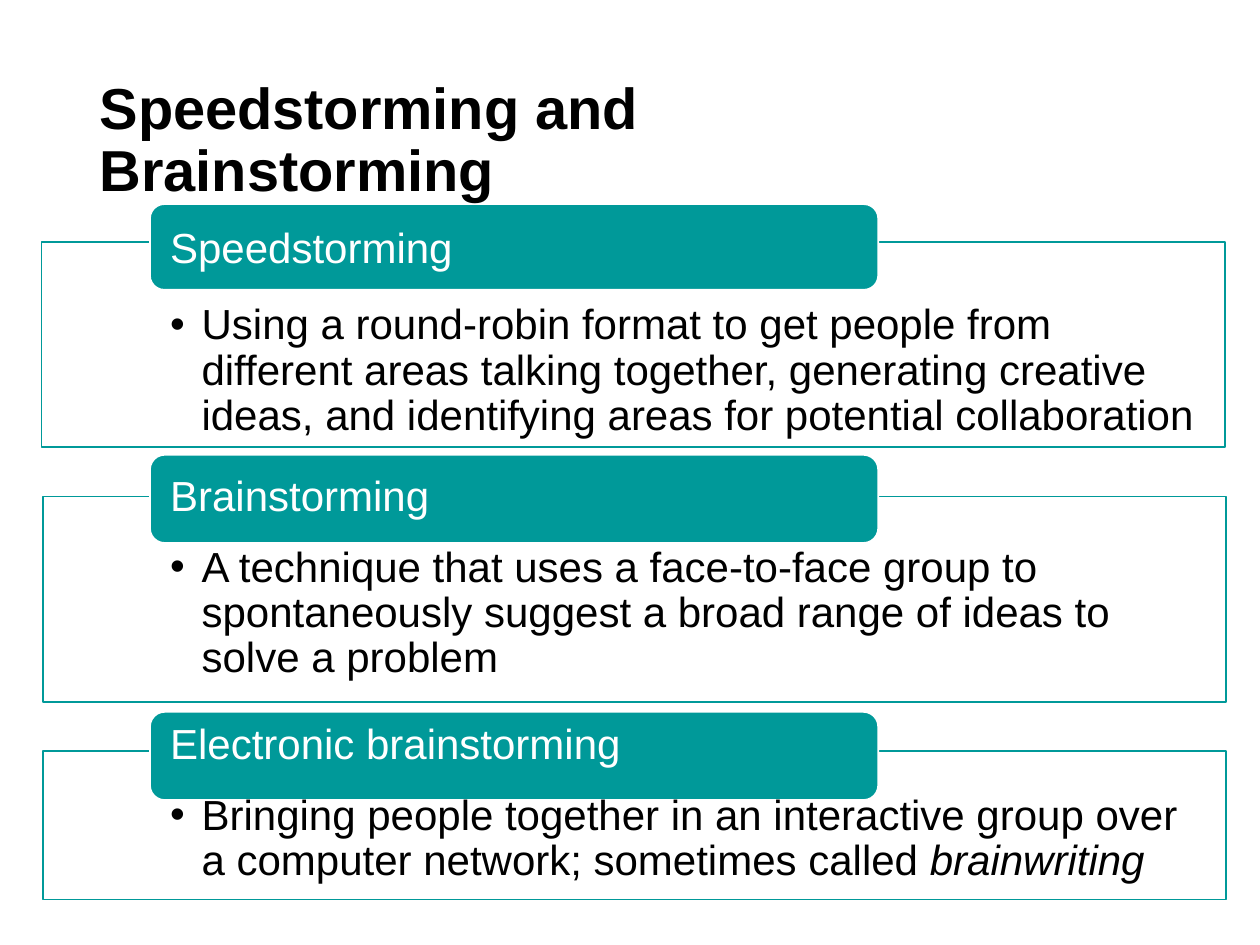
"""Build the Speedstorming and Brainstorming slide."""
import pptx
import pptx.dml.color
import pptx.enum.shapes
import pptx.enum.text
import pptx.oxml
import pptx.oxml.ns
import pptx.util

Inches = pptx.util.Inches
Pt = pptx.util.Pt
SHAPE = pptx.enum.shapes.MSO_SHAPE
ANCHOR = pptx.enum.text.MSO_ANCHOR

TEAL, WHITE, BLACK = "009999", "FFFFFF", "000000"
TITLE = "Speedstorming and Brainstorming"
SECTIONS = [
    {"heading": "Speedstorming",
     "spans": [("Using a round-robin format to get people from different areas talking together, "
                "generating creative ideas, and identifying areas for potential collaboration", False)],
     "frame": (0.33, 1.92, 9.39, 1.63), "label": (1.19, 1.62, 5.78, 0.68),
     "before": 0, "after": 18},
    {"heading": "Brainstorming",
     "spans": [("A technique that uses a face-to-face group to spontaneously suggest "
                "a broad range of ideas to solve a problem", False)],
     "frame": (0.34, 3.94, 9.39, 1.63), "label": (1.19, 3.61, 5.78, 0.7),
     "before": 20.3, "after": 14.4},
    {"heading": "Electronic brainstorming",
     "spans": [("Bringing people together in an interactive group over a computer network; "
                "sometimes called ", False), ("brainwriting", True)],
     "frame": (0.34, 5.96, 9.39, 1.18), "label": (1.19, 5.65, 5.78, 0.7),
     "before": 23.8, "after": 14.4},
]


def color(value):
    return pptx.dml.color.RGBColor.from_string(value)


def add_panel(page, kind, area, fill, line):
    panel = page.shapes.add_shape(kind, *map(Inches, area))
    panel.shadow.inherit = False
    if fill:
        panel.fill.solid()
        panel.fill.fore_color.rgb = color(fill)
    else:
        panel.fill.background()
    panel.line.color.rgb = color(line)
    panel.line.width = Pt(1)


def place(box, area, anchor):
    box.left, box.top, box.width, box.height = map(Inches, area)
    box.element.getparent().append(box.element)
    frame = box.text_frame
    frame.word_wrap = True
    frame.auto_size = pptx.enum.text.MSO_AUTO_SIZE.NONE
    frame.vertical_anchor = anchor
    return frame


def write(para, spans, size, ink, bold=False, before=0, after=0):
    para.alignment = pptx.enum.text.PP_ALIGN.LEFT
    para.line_spacing = 0.9
    para.space_before, para.space_after = Pt(before), Pt(after)
    for text, italic in spans:
        span = para.add_run()
        span.text = text
        span.font.name, span.font.size = "Arial", Pt(size)
        span.font.bold, span.font.italic = bold, italic
        span.font.color.rgb = color(ink)


def set_bullet(para, indent, mark=None):
    properties = para._p.get_or_add_pPr()
    properties.set("marL", str(Inches(indent)))
    properties.set("indent", str(-Inches(indent)))
    tag = f'a:buChar char="{mark}"' if mark else "a:buNone"
    properties.append(pptx.oxml.parse_xml(f"<{tag} {pptx.oxml.ns.nsdecls('a')}/>"))


def main():
    deck = pptx.Presentation()
    deck.slide_width, deck.slide_height = Inches(10), Inches(7.5)
    page = deck.slides.add_slide(deck.slide_layouts[1])
    title, body = page.placeholders

    for section in SECTIONS:
        add_panel(page, SHAPE.RECTANGLE, section["frame"], None, TEAL)
        add_panel(page, SHAPE.ROUNDED_RECTANGLE, section["label"], TEAL, WHITE)

    frame = place(title, (0.69, 0.4, 7.55, 1.45), ANCHOR.MIDDLE)
    write(frame.paragraphs[0], [(TITLE, False)], 33, BLACK, bold=True)

    frame = place(body, (1.25, 1.75, 8.47, 5.46), ANCHOR.TOP)
    for number, section in enumerate(SECTIONS):
        heading = frame.add_paragraph() if number else frame.paragraphs[0]
        set_bullet(heading, 0)
        write(heading, [(section["heading"], False)], 24, WHITE,
              before=section["before"], after=section["after"])
        detail = frame.add_paragraph()
        detail.level = 1
        set_bullet(detail, 0.25, "•")
        write(detail, section["spans"], 24, BLACK)

    deck.save("out.pptx")


if __name__ == "__main__":
    main()
